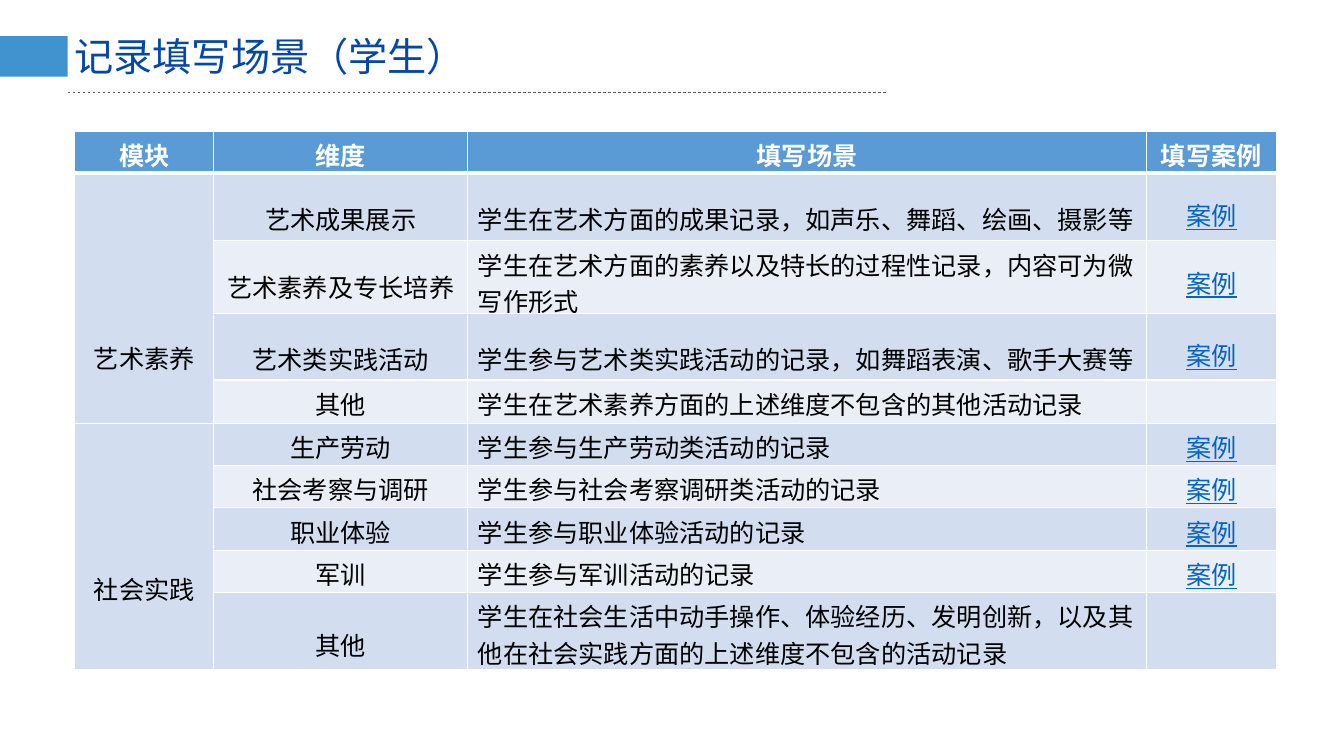
from lxml import etree
from pptx import Presentation
from pptx import util as u
from pptx.dml import color
from pptx.enum import dml, shapes, text
from pptx.oxml import ns

HUES = {"bar": "0070C0", "rule": "595959", "title": "0547A7", "head": "5B9BD5",
        "odd": "D2DEEF", "even": "EAEFF7", "edge": "FFFFFF", "light": "FFFFFF",
        "ink": "000000", "link": "0563C1"}
CJK = "Noto Sans CJK SC"

COLS = [1.38, 2.52, 6.73, 1.29]
HEAD = ["模块", "维度", "填写场景", "填写案例"]
# Module, line spacing, then rows of: dimension, scene, has a case, height,
# and line spacing of the dimension, scene and case cells
PARTS = [
    ("艺术素养", 5.4, [
        ("艺术成果展示", "学生在艺术方面的成果记录，如声乐、舞蹈、绘画、摄影等", True, 0.67, (1.6, 1.6, 1.5)),
        ("艺术素养及专长培养", "学生在艺术方面的素养以及特长的过程性记录，内容可为微写作形式", True, 0.72, (1.6, 1, 1.5)),
        ("艺术类实践活动", "学生参与艺术类实践活动的记录，如舞蹈表演、歌手大赛等", True, 0.66, (1.6, 1.6, 1.5)),
        ("其他", "学生在艺术素养方面的上述维度不包含的其他活动记录", False, 0.43, (1, 1, 1)),
    ]),
    ("社会实践", 4.9, [
        ("生产劳动", "学生参与生产劳动类活动的记录", True, 0.42, (1, 1, 1)),
        ("社会考察与调研", "学生参与社会考察调研类活动的记录", True, 0.42, (1, 1, 1)),
        ("职业体验", "学生参与职业体验活动的记录", True, 0.42, (1, 1, 1)),
        ("军训", "学生参与军训活动的记录", True, 0.42, (1, 1, 1)),
        ("其他", "学生在社会生活中动手操作、体验经历、发明创新，以及其他在社会实践方面的上述维度不包含的活动记录",
         False, 0.77, (1.8, 1, 1)),
    ]),
]


def rgb(name):
    return color.RGBColor.from_string(HUES[name])


def sub(node, tag, **attrs):
    return etree.SubElement(node, ns.qn(tag), **attrs)


def style(para, size, hue, face, bold=False, line=False):
    for run in para.runs:
        font = run.font
        font.size, font.name, font.bold = u.Pt(size), face, bold
        font.underline = line
        font.color.rgb = rgb(hue)
        sub(font._element, "a:ea", typeface=CJK)


def edge(cell, top, base):
    """Draw the four cell borders; they precede the fill in the XML."""
    props = cell._tc.get_or_add_tcPr()
    for spot, (tag, width) in enumerate([("a:lnL", 1), ("a:lnR", 1), ("a:lnT", top), ("a:lnB", base)]):
        line = etree.Element(ns.qn(tag), w=str(u.Pt(width)))
        sub(sub(line, "a:solidFill"), "a:srgbClr", val=HUES["edge"])
        props.insert(spot, line)


def put(cell, words, fill, hue="ink", gap=1, left=False, bold=False, line=False):
    cell.fill.solid()
    cell.fill.fore_color.rgb = rgb(fill)
    cell.margin_bottom = 0
    cell.text_frame.text = words
    para = cell.text_frame.paragraphs[0]
    para.alignment = text.PP_ALIGN.LEFT if left else text.PP_ALIGN.CENTER
    if gap != 1:
        para.line_spacing = gap
    style(para, 18, hue, "Calibri", bold, line)


def banner(slide, x, y, title):
    # Accent bar
    bar = slide.shapes.add_shape(shapes.MSO_SHAPE.RECTANGLE, u.Inches(x), u.Inches(y),
                                 u.Inches(0.68), u.Inches(0.4))
    bar.shadow.inherit = False
    bar.fill.solid()
    bar.fill.fore_color.rgb = rgb("bar")
    tint = bar._element.spPr.find(".//" + ns.qn("a:srgbClr"))
    sub(tint, "a:alpha", val="75000")
    bar.line.fill.background()

    # Dashed rule
    left, low = u.Inches(x + 0.68), u.Inches(y + 0.56)
    rule = slide.shapes.add_connector(shapes.MSO_CONNECTOR.STRAIGHT, left, low,
                                      left + u.Inches(8.12), low)
    rule.line.color.rgb = rgb("rule")
    rule.line.width = u.Pt(0.5)
    rule.line.dash_style = dml.MSO_LINE.DASH
    sub(rule._element.spPr, "a:effectLst")

    # Title
    box = slide.shapes.add_textbox(u.Inches(x + 0.65), u.Inches(y - 0.09),
                                   u.Inches(7.66), u.Inches(0.57))
    frame = box.text_frame
    frame.text = title
    frame.word_wrap = True
    frame.auto_size = text.MSO_AUTO_SIZE.SHAPE_TO_FIT_TEXT
    frame.vertical_anchor = text.MSO_ANCHOR.MIDDLE
    style(frame.paragraphs[0], 28, "title", CJK)


def grid(slide, x, y):
    highs = [0.42] + [row[3] for part in PARTS for row in part[2]]
    table = slide.shapes.add_table(len(highs), len(COLS), u.Inches(x), u.Inches(y),
                                   u.Inches(sum(COLS)), u.Inches(sum(highs))).table
    for col, wide in zip(table.columns, COLS):
        col.width = u.Inches(wide)
    for row, high in zip(table.rows, highs):
        row.height = u.Inches(high)

    # Header row
    for col, words in enumerate(HEAD):
        put(table.cell(0, col), words, "head", "light", bold=True)

    # Modules with their rows
    at = 1
    for name, gap, rows in PARTS:
        first = table.cell(at, 0)
        first.merge(table.cell(at + len(rows) - 1, 0))
        put(first, name, "odd", gap=gap)
        for kind, scene, case, _, gaps in rows:
            band = "odd" if at % 2 else "even"
            put(table.cell(at, 1), kind, band, gap=gaps[0])
            put(table.cell(at, 2), scene, band, gap=gaps[1], left=True)
            put(table.cell(at, 3), "案例" if case else "", band, "link", gaps[2], line=True)
            at += 1

    # Borders, thick below the header
    for at in range(len(highs)):
        for col in range(len(COLS)):
            edge(table.cell(at, col), 3 if at == 1 else 1, 3 if at == 0 else 1)


def main():
    deck = Presentation()
    deck.slide_width, deck.slide_height = u.Inches(13.33), u.Inches(7.5)
    slide = deck.slides.add_slide(deck.slide_layouts[6])
    banner(slide, -0.01, 0.36, "记录填写场景（学生）")
    grid(slide, 0.74, 1.3)
    deck.save("out.pptx")


if __name__ == "__main__":
    main()
